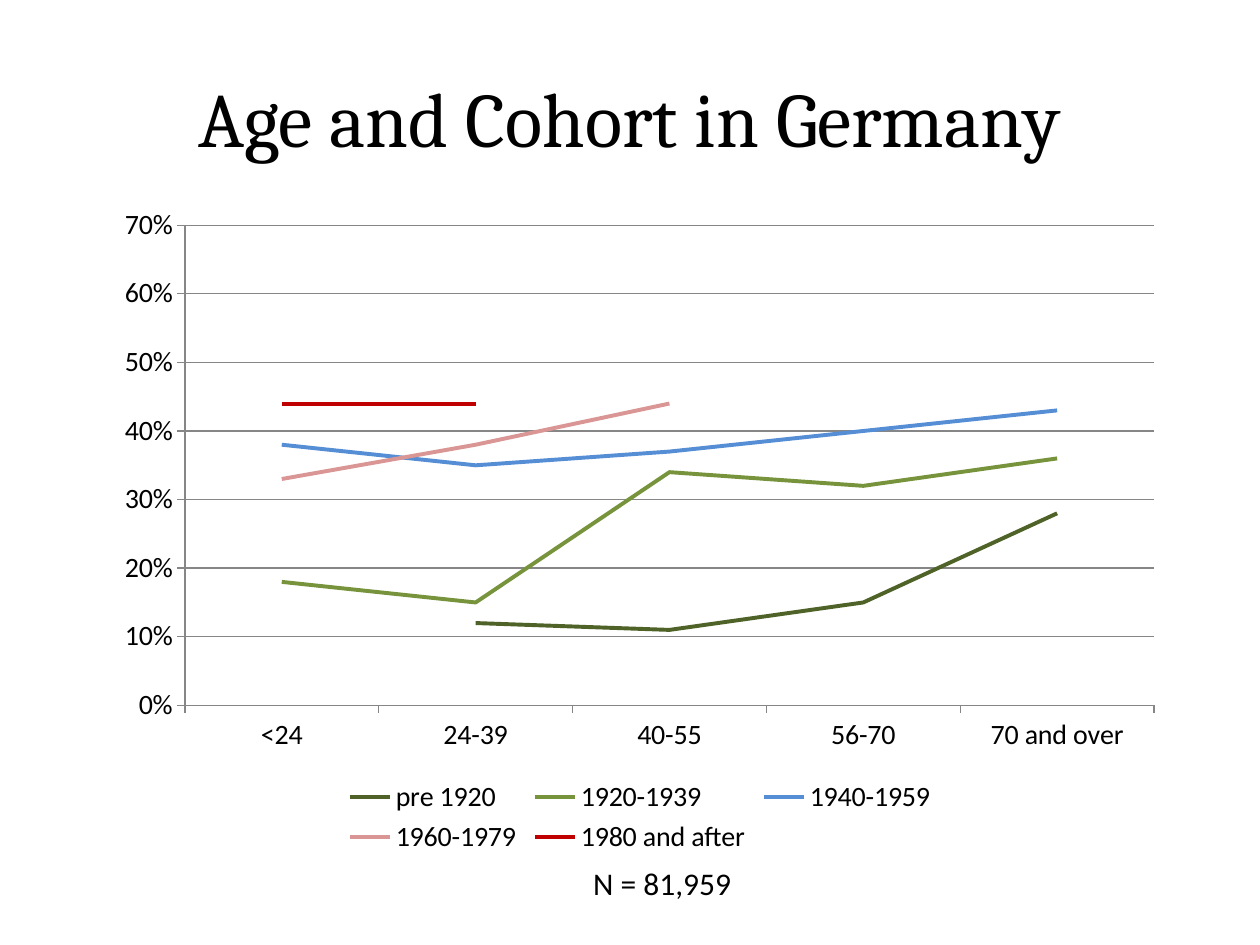
from lxml import etree
from pptx import Presentation
from pptx import util as u
from pptx.chart.data import CategoryChartData
from pptx.dml.color import RGBColor
from pptx.enum import chart as ch, text as t
from pptx.oxml.ns import qn

BLACK = RGBColor(0x00, 0x00, 0x00)
GREY = RGBColor(0x86, 0x86, 0x86)
MOSS = RGBColor(0x4F, 0x62, 0x28)
GREEN = RGBColor(0x77, 0x93, 0x3C)
BLUE = RGBColor(0x55, 0x8E, 0xD5)
PINK = RGBColor(0xD9, 0x96, 0x94)
RED = RGBColor(0xC0, 0x00, 0x00)

AGES = ["<24", "24-39", "40-55", "56-70", "70 and over"]
COHORTS = [
    ("pre 1920", MOSS, [None, 0.12, 0.11, 0.15, 0.28]),
    ("1920-1939", GREEN, [0.18, 0.15, 0.34, 0.32, 0.36]),
    ("1940-1959", BLUE, [0.38, 0.35, 0.37, 0.40, 0.43]),
    ("1960-1979", PINK, [0.33, 0.38, 0.44, None, None]),
    ("1980 and after", RED, [0.44, 0.44, None, None, None]),
]


def style(font, name, size):
    font.name = name
    font.size = u.Pt(size)
    font.color.rgb = BLACK


def place(shape, left, top, width, height):
    shape.left, shape.top = u.Inches(left), u.Inches(top)
    shape.width, shape.height = u.Inches(width), u.Inches(height)


def add_run(para, words, font, size):
    run = para.add_run()
    run.text = words
    style(run.font, font, size)


def add_title(slide, words):
    title = slide.shapes.title
    place(title, 0.5, 0.3, 9, 1.25)
    frame = title.text_frame
    frame.vertical_anchor = t.MSO_ANCHOR.MIDDLE
    para = frame.paragraphs[0]
    para.alignment = t.PP_ALIGN.CENTER
    add_run(para, words, "Cambria", 44)


def add_note(slide, words):
    box = slide.shapes.add_textbox(
        u.Inches(4.61), u.Inches(6.81), u.Inches(1.31), u.Inches(0.4))
    frame = box.text_frame
    frame.word_wrap = False
    frame.auto_size = t.MSO_AUTO_SIZE.SHAPE_TO_FIT_TEXT
    add_run(frame.paragraphs[0], words, "Calibri", 18)


def set_layout(part, index, inner, **area):
    """Fix a chart part at fractions of the chart's size."""
    for old in part.findall(qn("c:layout")):
        part.remove(old)
    layout = etree.Element(qn("c:layout"))
    manual = etree.SubElement(layout, qn("c:manualLayout"))
    marks = {"layoutTarget": "inner"} if inner else {}
    marks.update(xMode="edge", yMode="edge", **area)
    for tag, value in marks.items():
        etree.SubElement(manual, qn("c:" + tag)).set("val", str(value))
    part.insert(index, layout)


def style_axis(axis):
    axis.major_tick_mark = ch.XL_TICK_MARK.OUTSIDE
    axis.minor_tick_mark = ch.XL_TICK_MARK.NONE
    axis.format.line.color.rgb = GREY
    axis.format.line.width = u.Pt(0.75)


def style_values(axis):
    style_axis(axis)
    axis.minimum_scale = 0
    axis.maximum_scale = 0.7
    axis.major_unit = 0.1
    axis.tick_labels.number_format = "0%"
    axis.tick_labels.number_format_is_linked = False
    axis.has_major_gridlines = True
    grid = axis.major_gridlines.format.line
    grid.color.rgb = GREY
    grid.width = u.Pt(0.75)


def add_legend(chart):
    chart.has_legend = True
    legend = chart.legend
    legend.position = ch.XL_LEGEND_POSITION.BOTTOM
    legend.include_in_layout = False
    style(legend.font, "Calibri", 16)
    part = chart.element.find(".//" + qn("c:legend"))
    set_layout(part, 1, False, x=0.22, y=0.87, w=0.56, h=0.13)


def add_lines(slide):
    data = CategoryChartData(number_format="0%")
    data.categories = AGES
    for name, _, shares in COHORTS:
        data.add_series(name, shares)
    chart = slide.shapes.add_chart(
        ch.XL_CHART_TYPE.LINE, u.Inches(0.83), u.Inches(1.55),
        u.Inches(8.5), u.Inches(5.28), data).chart
    chart.has_title = False
    style(chart.font, "Calibri", 16)
    plot = chart.plots[0]
    plot.vary_by_categories = False
    for line, (_, color, _) in zip(plot.series, COHORTS):
        line.smooth = False
        line.marker.style = ch.XL_MARKER_STYLE.NONE
        line.format.line.color.rgb = color
        line.format.line.width = u.Pt(2.25)
    style_axis(chart.category_axis)
    style_values(chart.value_axis)
    area = chart.element.find(".//" + qn("c:plotArea"))
    set_layout(area, 0, True, x=0.075, y=0.045, w=0.905, h=0.722)
    add_legend(chart)


def main():
    deck = Presentation()
    deck.slide_width, deck.slide_height = u.Inches(10), u.Inches(7.5)
    slide = deck.slides.add_slide(deck.slide_layouts[5])
    add_title(slide, "Age and Cohort in Germany")
    add_note(slide, "N = 81,959")
    add_lines(slide)
    deck.save("out.pptx")


if __name__ == "__main__":
    main()
